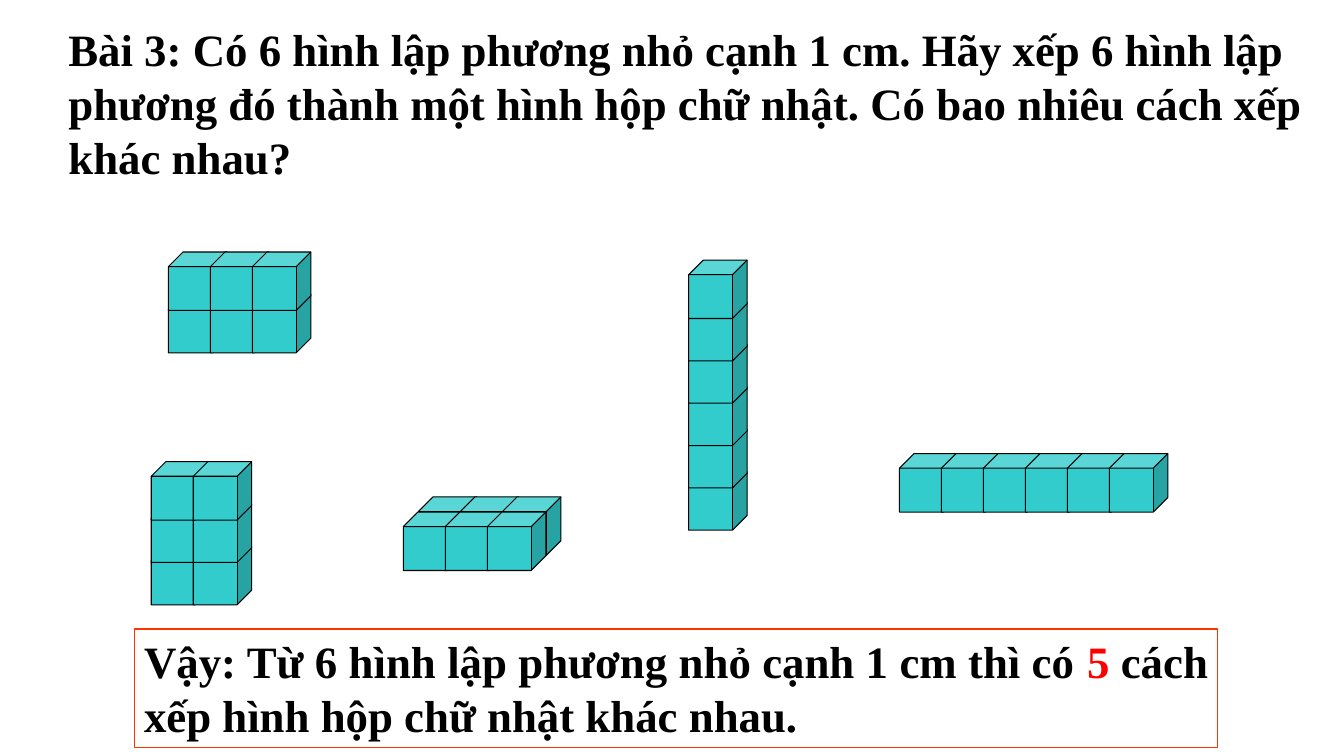
from pptx import Presentation
from pptx.dml.color import RGBColor
from pptx.enum import shapes, text
from pptx.util import Inches, Pt

# Content
QUESTION = [("Bài 3: Có 6 hình lập phương nhỏ cạnh 1 cm. Hãy xếp 6 hình lập phương "
             "đó thành một hình hộp chữ nhật. Có bao nhiêu cách xếp khác nhau?", "000000")]
ANSWER = [("Vậy: Từ 6 hình lập phương nhỏ cạnh 1 cm thì có ", "000000"),
          ("5", "FF0000"),
          (" cách xếp hình hộp chữ nhật khác nhau.", "000000")]

# Each arrangement: left and top of its lower front left cube, then columns, layers, rows
ARRANGEMENTS = [
    (4.00, 5.08, 3, 1, 2),
    (8.92, 4.50, 6, 1, 1),
    (6.83, 4.68, 1, 6, 1),
    (1.67, 2.92, 3, 2, 1),
    (1.50, 5.42, 2, 3, 1),
]
CUBE = 0.58
COLUMN_STEP, LAYER_STEP, ROW_STEP = 5 / 12, 0.42, 0.15

deck = Presentation()
deck.slide_width, deck.slide_height = Inches(13.33), Inches(7.5)
slide = deck.slides.add_slide(deck.slide_layouts[6])


def colour(hex_code):
    return RGBColor.from_string(hex_code)


def add_words(pieces, left, top, width, height):
    box = slide.shapes.add_textbox(*map(Inches, (left, top, width, height)))
    box.text_frame.word_wrap = True
    box.text_frame.auto_size = text.MSO_AUTO_SIZE.SHAPE_TO_FIT_TEXT
    paragraph = box.text_frame.paragraphs[0]
    paragraph.font.name = "Times New Roman"
    paragraph.font.size = Pt(32)
    paragraph.font.bold = True
    for words, shade in pieces:
        run = paragraph.add_run()
        run.text = words
        run.font.color.rgb = colour(shade)
    return box


def add_cube(group, left, top):
    cube = group.shapes.add_shape(shapes.MSO_SHAPE.CUBE, Inches(left), Inches(top),
                                  Inches(CUBE), Inches(CUBE))
    cube.adjustments[0] = 0.25
    cube.shadow.inherit = False
    cube.fill.solid()
    cube.fill.fore_color.rgb = colour("33CCCC")
    cube.line.color.rgb = colour("000000")
    cube.line.width = Pt(0.75)


# Question
add_words(QUESTION, 0.58, 0.17, 12.67, 1.72)

# Cube arrangements, drawn from the back row forward and from the bottom up
for left, top, columns, layers, rows in ARRANGEMENTS:
    arrangement = slide.shapes.add_group_shape()
    for row in reversed(range(rows)):
        for layer in range(layers):
            for column in range(columns):
                add_cube(arrangement,
                         left + column * COLUMN_STEP + row * ROW_STEP,
                         top - layer * LAYER_STEP - row * ROW_STEP)

# Answer
answer = add_words(ANSWER, 1.33, 6.24, 10.75, 1.18)
answer.text_frame.paragraphs[0].alignment = text.PP_ALIGN.JUSTIFY
answer.line.color.rgb = colour("FF3300")
answer.line.width = Pt(0.75)

deck.save("out.pptx")
